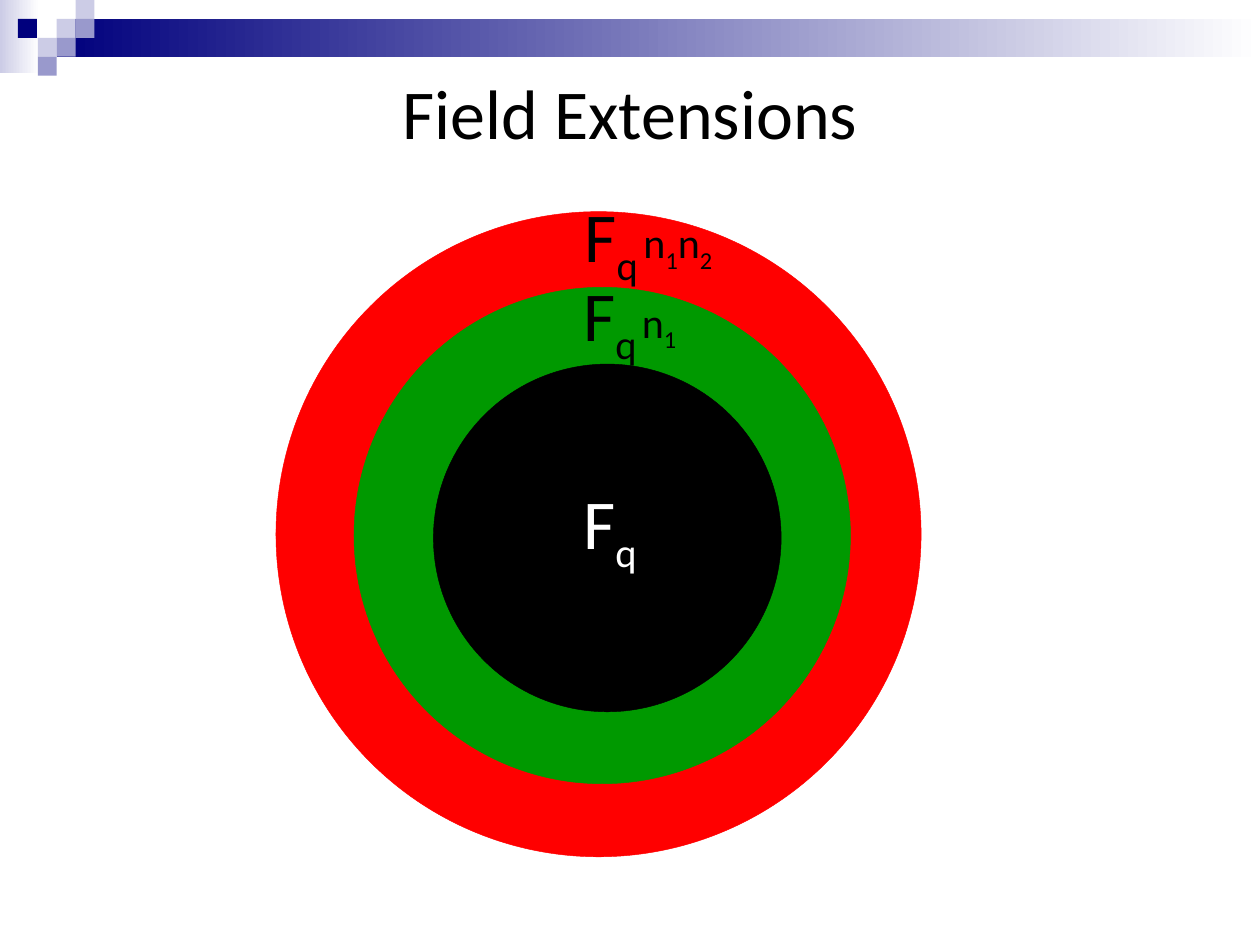
from pptx import Presentation
from pptx.dml.color import RGBColor
from pptx.enum.shapes import MSO_SHAPE as Shape
from pptx.enum.text import MSO_ANCHOR as Anchor, MSO_AUTO_SIZE as AutoSize, PP_ALIGN as Align
from pptx.util import Inches, Pt

NAVY = RGBColor(0x00, 0x00, 0x7D)
LAVENDER = RGBColor(0xCC, 0xCC, 0xE6)
PERIWINKLE = RGBColor(0x99, 0x99, 0xCC)
RED = RGBColor(0xFF, 0x00, 0x00)
GREEN = RGBColor(0x00, 0x99, 0x00)
BLACK = RGBColor(0x00, 0x00, 0x00)
WHITE = RGBColor(0xFF, 0xFF, 0xFF)


class Deck:
    """Style and current slide; x and y are percent of width and height."""
    font = "Calibri"
    cell = Inches(0.15)  # square of the header mosaic

    def __init__(self):
        self.prs = Presentation()
        self.prs.slide_width, self.prs.slide_height = Inches(10), Inches(7.5)
        self.slide = self.prs.slides.add_slide(self.prs.slide_layouts[5])

    def x(self, percent):
        return round(self.prs.slide_width * percent / 100)

    def y(self, percent):
        return round(self.prs.slide_height * percent / 100)

    def style_text(self, tf, size, color):
        tf.word_wrap = True
        tf.auto_size = AutoSize.NONE
        tf.vertical_anchor = Anchor.TOP
        p = tf.paragraphs[0]
        p.alignment = Align.CENTER
        p.font.name, p.font.size, p.font.color.rgb = self.font, Pt(size), color
        return p

    def title(self, text):
        s = self.slide.shapes.title
        s.left, s.top, s.width, s.height = self.x(5), self.y(6.67), self.x(90), self.y(15)
        s.text_frame.text = text
        self.style_text(s.text_frame, 40, BLACK)

    def block(self, col, row, cols, rows, color, fade=None):
        """Header rectangle in mosaic cells, optionally fading to the right."""
        box = [round(n * self.cell) for n in (col, row, cols, rows)]
        s = self.slide.shapes.add_shape(Shape.RECTANGLE, *box)
        s.shadow.inherit = False
        s.line.fill.background()
        if fade is None:
            s.fill.solid()
            s.fill.fore_color.rgb = color
            return
        s.fill.gradient()
        s.fill.gradient_angle = 0
        for stop, rgb in zip(s.fill.gradient_stops, (color, fade)):
            stop.color.rgb = rgb

    def disc(self, cx, cy, diameter, color):
        d = self.x(diameter)
        s = self.slide.shapes.add_shape(
            Shape.OVAL, self.x(cx) - d // 2, self.y(cy) - d // 2, d, d)
        s.shadow.inherit = False
        s.fill.solid()
        s.fill.fore_color.rgb = color
        s.line.color.rgb = color
        s.line.width = Pt(0.25)

    def symbol(self, left, top, text, size=40, color=BLACK):
        """Letters alternate between the baseline and a subscript."""
        height = Pt(size * 1.22) + Inches(0.1)
        s = self.slide.shapes.add_textbox(self.x(left), self.y(top), self.x(10.8), height)
        p = self.style_text(s.text_frame, size, color)
        for i, letter in enumerate(text):
            r = p.add_run()
            r.text = letter
            if i % 2:
                r.font._element.set("baseline", "-25000")

    def save(self):
        self.prs.save("out.pptx")


def main():
    deck = Deck()

    # Header band and mosaic
    deck.block(0, 0, 2.07, 3.87, LAVENDER, fade=WHITE)
    deck.block(3, 1, 63.67, 2, NAVY, fade=WHITE)
    for col, row, color in [(3, 1, LAVENDER), (4, 0, LAVENDER), (4, 1, PERIWINKLE),
                            (2, 2, LAVENDER), (0.95, 1, NAVY), (3, 2, PERIWINKLE),
                            (2, 3, PERIWINKLE)]:
        deck.block(col, row, 1, 1, color)

    deck.title("Field Extensions")

    # Nested fields, largest first
    deck.disc(47.5, 56.53, 51.2, RED)
    deck.disc(47.8, 56.67, 39.4, GREEN)
    deck.disc(48.2, 56.93, 27.6, BLACK)

    # Field names, then their exponents
    deck.symbol(43, 50.13, "Fq", color=WHITE)
    deck.symbol(43, 28.13, "Fq")
    deck.symbol(43.1, 19.73, "Fq")
    deck.symbol(46.9, 30.67, "n1", size=24)
    deck.symbol(48.4, 22.27, "n1n2", size=24)

    deck.save()


if __name__ == "__main__":
    main()
